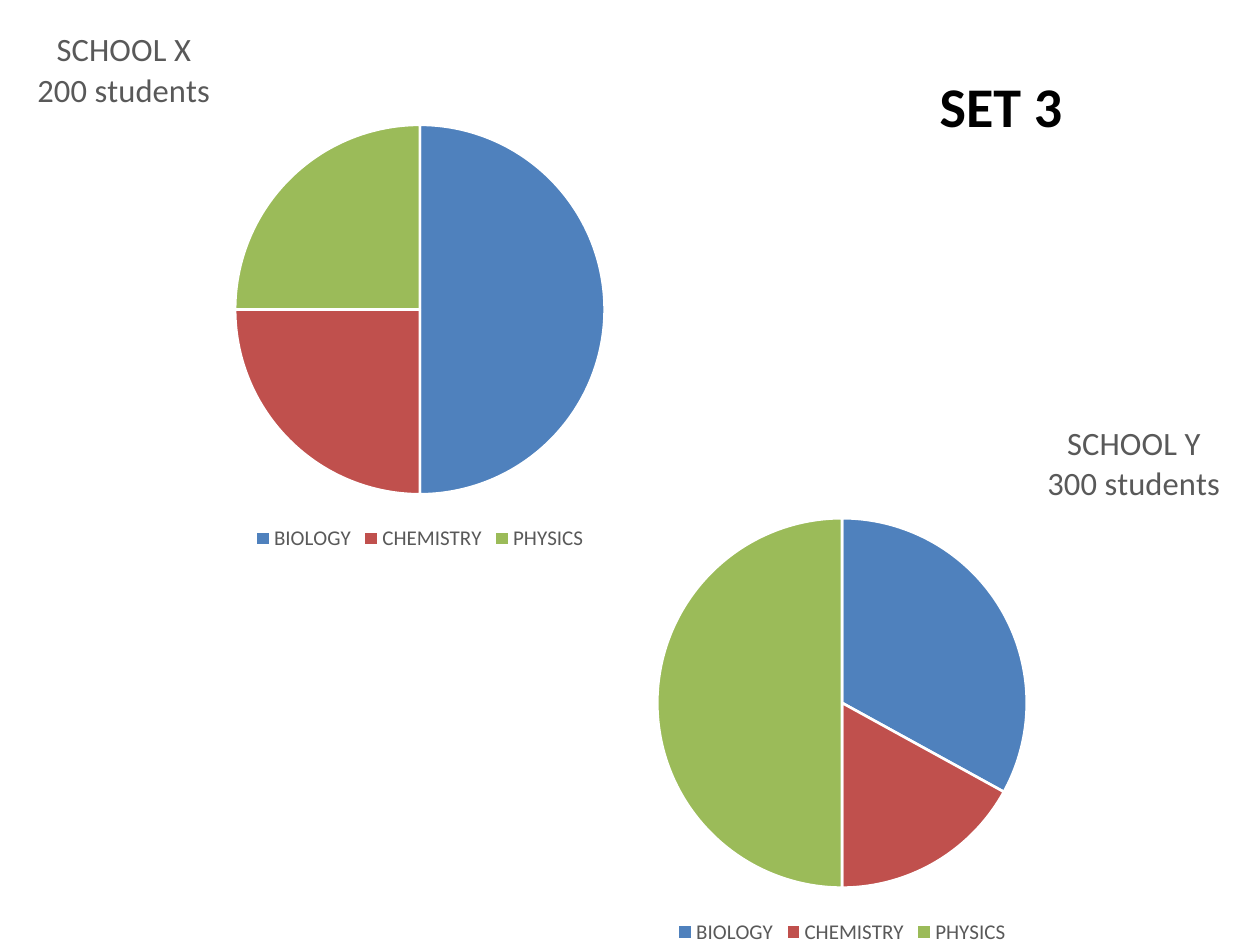
"""Build a slide that compares the science students of two schools."""
import lxml.etree as etree
import pptx
import pptx.chart.data
import pptx.dml.color
import pptx.enum.chart
import pptx.enum.text
import pptx.oxml.ns
import pptx.util
from pptx.util import Cm, Pt

HUES = {"blue": "4F81BD", "red": "C0504D", "green": "9BBB59",
        "grey": "595959", "black": "000000", "white": "FFFFFF"}
FACE = "Calibri"
TERMS = ("BIOLOGY", "CHEMISTRY", "PHYSICS")
SCHOOLS = (
    (0, -0.08, "SCHOOL X", "200 students", (50, 25, 25), 0.04),
    (8.51, 7.85, "SCHOOL Y", "300 students", (33, 17, 50), 0.74),
)


def paint(font, size, hue, bold=False):
    """Set the face, size, colour and weight of a font."""
    font.name = FACE
    font.size = Pt(size)
    font.bold = bold
    font.color.rgb = pptx.dml.color.RGBColor.from_string(HUES[hue])


def write(para, text, size, hue, bold=False):
    """Add one formatted run to a paragraph."""
    run = para.add_run()
    run.text = text
    paint(run.font, size, hue, bold)


def place(node, index, **parts):
    """Give a chart part a manual layout, in fractions of the chart."""
    qn = pptx.oxml.ns.qn
    for old in node.findall(qn("c:layout")):
        node.remove(old)
    layout = etree.Element(qn("c:layout"))
    node.insert(index, layout)
    manual = etree.SubElement(layout, qn("c:manualLayout"))
    if "w" in parts:
        etree.SubElement(manual, qn("c:layoutTarget"), val="inner")
    for key in ("x", "y"):
        etree.SubElement(manual, qn(f"c:{key}Mode"), val="edge")
    for key, part in parts.items():
        etree.SubElement(manual, qn(f"c:{key}"), val=str(part))


def clear(chart):
    """Make the chart background transparent."""
    qn = pptx.oxml.ns.qn
    shape = etree.Element(qn("c:spPr"))
    etree.SubElement(shape, qn("a:noFill"))
    line = etree.SubElement(shape, qn("a:ln"))
    etree.SubElement(line, qn("a:noFill"))
    chart.element.find(qn("c:chart")).addnext(shape)


def label(chart, lines, left):
    """Write the chart title, one paragraph a line."""
    chart.has_title = True
    title = chart.chart_title
    frame = title.text_frame
    for index, text in enumerate(lines):
        para = frame.add_paragraph() if index else frame.paragraphs[0]
        para.alignment = pptx.enum.text.PP_ALIGN.CENTER
        write(para, text, 18.6, "grey")
    place(title.element, 1, x=left, y=0.05)


def tint(plot):
    """Colour the slices and part them with white lines."""
    plot.vary_by_categories = True
    rgb = pptx.dml.color.RGBColor.from_string
    for index, hue in enumerate(("blue", "red", "green")):
        form = plot.series[0].points[index].format
        form.fill.solid()
        form.fill.fore_color.rgb = rgb(HUES[hue])
        form.line.color.rgb = rgb(HUES["white"])
        form.line.width = Pt(1.5)


def add_pie(slide, left, top, name, count, shares, start):
    """Add the pie chart of one school."""
    data = pptx.chart.data.CategoryChartData()
    data.categories = TERMS
    data.add_series("Series 1", shares)
    chart = slide.shapes.add_chart(
        pptx.enum.chart.XL_CHART_TYPE.PIE,
        Cm(left), Cm(top), Cm(16.93), Cm(11.29), data).chart
    paint(chart.font, 10, "black")
    clear(chart)
    label(chart, (name, count), start)
    tint(chart.plots[0])
    area = chart.element.find(".//" + pptx.oxml.ns.qn("c:plotArea"))
    place(area, 0, x=0.28, y=0.23, w=0.44, h=0.66)
    chart.has_legend = True
    chart.legend.position = pptx.enum.chart.XL_LEGEND_POSITION.BOTTOM
    chart.legend.include_in_layout = False
    paint(chart.legend.font, 12, "grey")


def add_head(slide, text):
    """Fill and move the slide title."""
    head = slide.shapes.title
    head.left, head.top = Cm(18.69), Cm(1.32)
    head.width, head.height = Cm(3.2), Cm(1.63)
    frame = head.text_frame
    frame.word_wrap = False
    frame.vertical_anchor = pptx.enum.text.MSO_ANCHOR.TOP
    para = frame.paragraphs[0]
    para.alignment = pptx.enum.text.PP_ALIGN.LEFT
    write(para, text, 32, "black", True)


def main():
    """Build and save the slide."""
    deck = pptx.Presentation()
    deck.slide_width, deck.slide_height = Cm(25.4), Cm(19.05)
    slide = deck.slides.add_slide(deck.slide_layouts.get_by_name("Title Only"))
    for school in SCHOOLS:
        add_pie(slide, *school)
    add_head(slide, "SET 3")
    deck.save("out.pptx")


if __name__ == "__main__":
    main()
